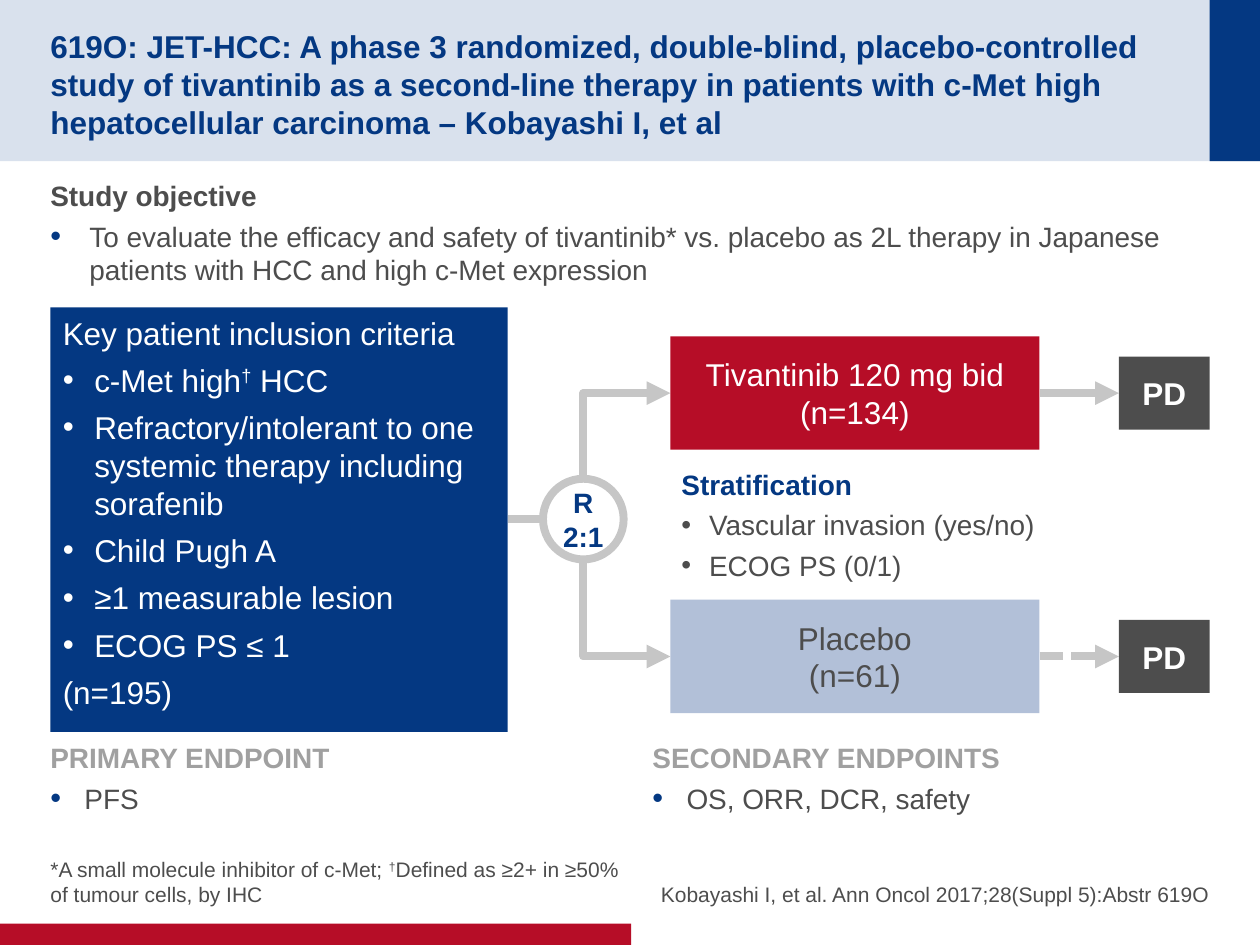
from lxml import etree
from pptx import Presentation
from pptx import util as u
from pptx.dml.color import RGBColor
from pptx.enum import dml, shapes, text
from pptx.oxml.ns import qn

NAVY = RGBColor(0x04, 0x38, 0x82)
PALE = RGBColor(0xD9, 0xE1, 0xED)
RED = RGBColor(0xB6, 0x0D, 0x27)
SKY = RGBColor(0xB2, 0xC0, 0xD8)
DARK = RGBColor(0x4D, 0x4D, 0x4D)
SILVER = RGBColor(0xC6, 0xC6, 0xC6)
GREY = RGBColor(0xA0, 0xA0, 0xA0)
WHITE = RGBColor(0xFF, 0xFF, 0xFF)

FLUSH = (0, 0.05, 0, 0.05)
PADDED = (0.1, 0.05, 0.1, 0.05)
SIDES = (0.1, 0, 0.1, 0)
LEFT, CENTER, RIGHT = text.PP_ALIGN.LEFT, text.PP_ALIGN.CENTER, text.PP_ALIGN.RIGHT
TOP, MIDDLE, BOTTOM = text.MSO_ANCHOR.TOP, text.MSO_ANCHOR.MIDDLE, text.MSO_ANCHOR.BOTTOM


def inches(box):
    """Turn a sequence of numbers into inch lengths."""
    return [u.Inches(value) for value in box]


def add_bullet(paragraph, indent, color=None):
    """Give a paragraph a hanging bullet, enlarged when coloured."""
    properties = paragraph._p.get_or_add_pPr()
    properties.set("marL", str(u.Inches(indent)))
    properties.set("indent", str(-u.Inches(indent)))
    if color is not None:
        holder = etree.SubElement(properties, qn("a:buClr"))
        etree.SubElement(holder, qn("a:srgbClr"), val=str(color))
        etree.SubElement(properties, qn("a:buSzPct"), val="110000")
    etree.SubElement(properties, qn("a:buFont"), typeface="Arial")
    etree.SubElement(properties, qn("a:buChar"), char="•")


def add_runs(paragraph, content, size, color, bold):
    """Write text with each dagger raised as a superscript."""
    for part in content.replace("†", "|†|").split("|"):
        if not part:
            continue
        run = paragraph.add_run()
        run.text = part
        values = {"name": "Arial", "size": u.Pt(size), "bold": bold}
        for name, value in values.items():
            setattr(run.font, name, value)
        run.font.color.rgb = color
        if part == "†":
            run._r.get_or_add_rPr().set("baseline", "30000")


def write(shape, lines, size, color, bold=False, align=LEFT, anchor=TOP,
          insets=PADDED, after=0, wrap=True):
    """Fill a shape with lines, each a string or a dict of overrides."""
    frame = shape.text_frame
    left, top, right, bottom = inches(insets)
    values = {"margin_left": left, "margin_top": top, "margin_right": right,
              "margin_bottom": bottom, "word_wrap": wrap, "vertical_anchor": anchor}
    for name, value in values.items():
        setattr(frame, name, value)
    for number, line in enumerate(lines):
        line = {"text": line} if isinstance(line, str) else line
        paragraph = frame.add_paragraph() if number else frame.paragraphs[0]
        paragraph.alignment = align
        paragraph.space_after = u.Pt(after)
        if "indent" in line:
            add_bullet(paragraph, line["indent"], line.get("bullet"))
        add_runs(paragraph, line["text"], size, line.get("color", color),
                 line.get("bold", bold))


def add_text(slide, box, lines, size, color, **options):
    """Place a text box."""
    write(slide.shapes.add_textbox(*inches(box)), lines, size, color, **options)


def add_block(slide, box, fill, kind=shapes.MSO_SHAPE.RECTANGLE):
    """Place a filled shape without outline or shadow."""
    shape = slide.shapes.add_shape(kind, *inches(box))
    shape.shadow.inherit = False
    shape.fill.solid()
    shape.fill.fore_color.rgb = fill
    shape.line.fill.background()
    return shape


def add_line(slide, start, end, arrow=True, dotted=False, kind=shapes.MSO_CONNECTOR.STRAIGHT):
    """Place a thick silver connector."""
    connector = slide.shapes.add_connector(kind, *inches(start + end))
    connector.line.color.rgb = SILVER
    connector.line.width = u.Pt(4.5)
    if dotted:
        connector.line.dash_style = dml.MSO_LINE.SQUARE_DOT
    if arrow:
        etree.SubElement(connector.line._get_or_add_ln(), qn("a:tailEnd"), type="triangle")
    etree.SubElement(connector._element.spPr, qn("a:effectLst"))
    return connector


def add_elbow(slide, start, end):
    """Run a one-bend arrow vertically from start, then right to end."""
    (x1, y1), (x2, y2) = start, end
    middle_x, middle_y = (x1 + x2) / 2, (y1 + y2) / 2
    half_width, half_height = abs(y2 - y1) / 2, (x2 - x1) / 2
    rise = half_height if y2 < y1 else -half_height
    connector = add_line(slide, (middle_x + half_width, middle_y + rise),
                         (middle_x - half_width, middle_y - rise),
                         kind=shapes.MSO_CONNECTOR.ELBOW)
    properties = connector._element.spPr
    properties.find(qn("a:xfrm")).set("rot", "5400000" if y2 < y1 else "16200000")
    properties.find(qn("a:prstGeom")).set("prst", "bentConnector2")


def add_header(slide, box, title):
    """Draw the title band with its navy end block."""
    left, top, width, height = box
    add_block(slide, box, PALE)
    add_block(slide, (left + width - 0.4, top, 0.4, height), NAVY)
    add_text(slide, (left + 0.4, top + 0.2, 9.01, 0.88), [title], 18, NAVY,
             bold=True, anchor=MIDDLE, insets=(0, 0.05, 0, 0))


def add_section(slide, box, heading, bullet, color, indent, insets=FLUSH):
    """Write a bold heading over one bulleted statement."""
    item = {"text": bullet, "indent": indent, "bullet": NAVY, "color": DARK, "bold": False}
    add_text(slide, box, [heading, item], 16, color, bold=True, insets=insets, after=4)


def add_criteria(slide, box):
    """Draw the patient inclusion panel."""
    items = ["c-Met high† HCC",
             "Refractory/intolerant to one systemic therapy including sorafenib",
             "Child Pugh A", "≥1 measurable lesion", "ECOG PS ≤ 1"]
    lines = [{"text": item, "indent": 0.25} for item in items]
    panel = add_block(slide, box, NAVY)
    write(panel, ["Key patient inclusion criteria", *lines, "(n=195)"], 18, WHITE, after=5.4)


def add_randomisation(slide, box, source_x, target_x, target_rows):
    """Draw the randomisation ring and its lines to both arms."""
    left, top, width, height = box
    center_x, center_y = left + width / 2, top + height / 2
    add_line(slide, (source_x, center_y), (left, center_y), arrow=False)
    for edge, row in zip((top, top + height), target_rows):
        add_elbow(slide, (center_x, edge), (target_x, row))
    ring = add_block(slide, box, WHITE, shapes.MSO_SHAPE.OVAL)
    ring.line.color.rgb = SILVER
    ring.line.width = u.Pt(4.5)
    write(ring, ["R", "2:1"], 16, NAVY, bold=True, align=CENTER, anchor=MIDDLE, wrap=False)


def add_arm(slide, box, lines, fill, color, dotted=False):
    """Draw a treatment arm leading to its progression box."""
    left, top, width, height = box
    right, center_y = left + width, top + height / 2
    style = {"align": CENTER, "anchor": MIDDLE, "insets": SIDES}
    add_line(slide, (right, center_y), (right + 0.63, center_y), dotted=dotted)
    write(add_block(slide, box, fill), lines, 18, color, **style)
    progression = add_block(slide, (right + 0.63, center_y - 0.29, 0.72, 0.58), DARK)
    write(progression, ["PD"], 18, WHITE, bold=True, **style)


def add_stratification(slide, box):
    """List the stratification factors."""
    factors = [{"text": factor, "indent": 0.22, "color": DARK, "bold": False}
               for factor in ("Vascular invasion (yes/no)", "ECOG PS (0/1)")]
    add_text(slide, box, ["Stratification", *factors], 16, NAVY, bold=True, after=4)


def add_footer(slide, box, note, citation):
    """Write the footnote, the citation and the red base bar."""
    left, top, width, height = box
    for x, line, align in ((left, note, LEFT), (left + 4.68, citation, RIGHT)):
        add_text(slide, (x, top, width, height), [line], 12, DARK, align=align,
                 anchor=BOTTOM, insets=(0, 0, 0, 0), after=4)
    add_block(slide, (0, 7.33, 5.01, 0.17), RED)


def main():
    """Build and save the study slide."""
    presentation = Presentation()
    presentation.slide_width, presentation.slide_height = inches((10, 7.5))
    slide = presentation.slides.add_slide(presentation.slide_layouts[6])
    add_header(slide, (0, 0, 10, 1.28),
               "619O: JET-HCC: A phase 3 randomized, double-blind, placebo-controlled study of "
               "tivantinib as a second-line therapy in patients with c-Met high "
               "hepatocellular carcinoma – Kobayashi I, et al")
    add_section(slide, (0.4, 1.37, 9.2, 5.19), "Study objective",
                "To evaluate the efficacy and safety of tivantinib* vs. placebo as 2L therapy "
                "in Japanese patients with HCC and high c-Met expression", DARK, 0.31)
    add_criteria(slide, (0.4, 2.44, 3.63, 3.37))
    add_randomisation(slide, (4.31, 3.8, 0.64, 0.64), 4.03, 5.32, (3.12, 5.21))
    add_arm(slide, (5.32, 2.67, 2.93, 0.9), ["Tivantinib 120 mg bid", "(n=134)"], RED, WHITE)
    add_arm(slide, (5.32, 4.76, 2.93, 0.9), ["Placebo", "(n=61)"], SKY, DARK, dotted=True)
    add_stratification(slide, (5.31, 3.66, 3.08, 0.98))
    add_section(slide, (0.4, 5.83, 4.52, 0.87), "PRIMARY ENDPOINT", "PFS", GREY, 0.27)
    add_section(slide, (5.08, 5.83, 4.52, 0.87), "SECONDARY ENDPOINTS",
                "OS, ORR, DCR, safety", GREY, 0.27, PADDED)
    add_footer(slide, (0.4, 6.67, 4.52, 0.53),
               "*A small molecule inhibitor of c-Met; †Defined as ≥2+ in ≥50% of tumour cells, by IHC",
               "Kobayashi I, et al. Ann Oncol 2017;28(Suppl 5):Abstr 619O")
    presentation.save("out.pptx")


if __name__ == "__main__":
    main()
